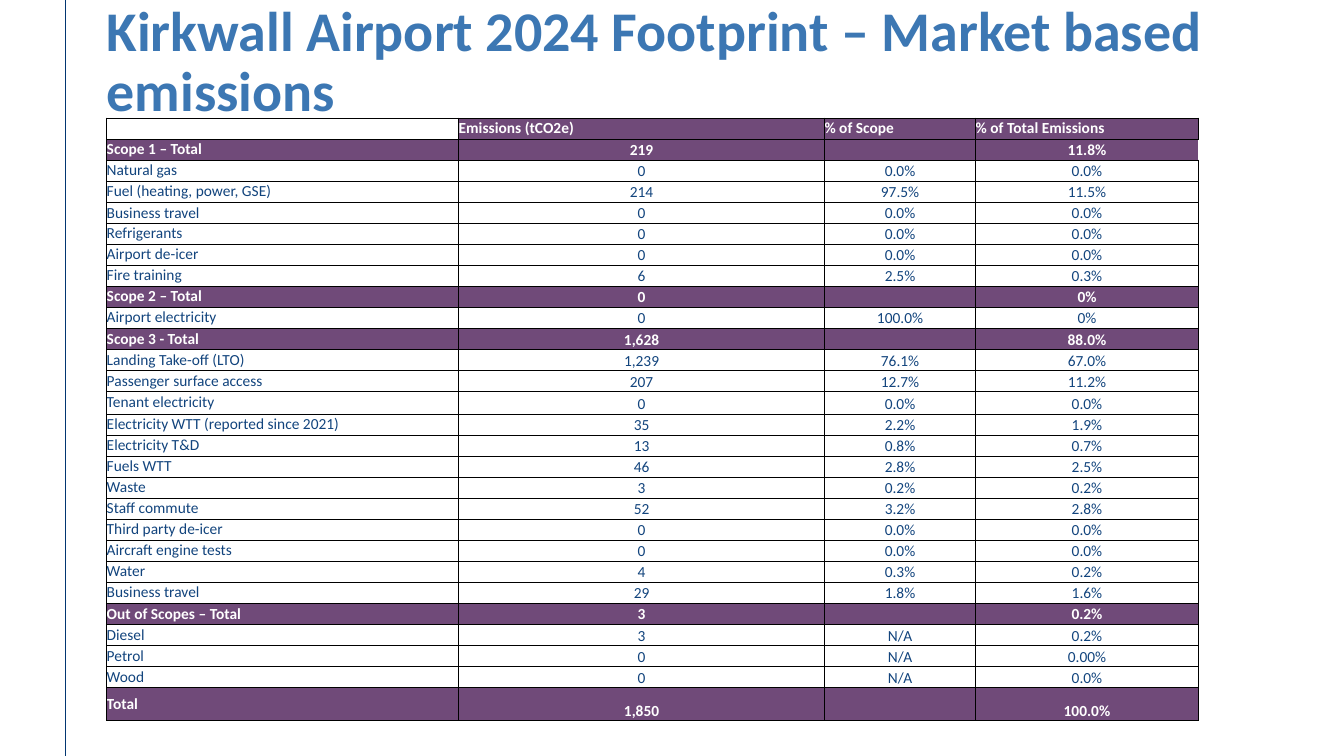
from dataclasses import dataclass
from typing import Any

from lxml.etree import SubElement
from pptx import Presentation
from pptx.dml.color import RGBColor
from pptx.enum.shapes import MSO_CONNECTOR
from pptx.enum.text import MSO_ANCHOR, PP_ALIGN
from pptx.oxml.ns import qn
from pptx.slide import Slide
from pptx.table import _Cell
from pptx.util import Cm, Pt


@dataclass(frozen=True)
class Theme:
    face: str = "Calibri"
    title_size: int = 40
    table_size: int = 11
    title: str = "3C77B3"
    body: str = "12447D"
    band: str = "704A79"
    on_band: str = "FFFFFF"
    margin_rule: str = "023671"
    grid: str = "000000"
    grid_width: float = 0.5


@dataclass(frozen=True)
class Emission:
    label: str
    tonnes: str
    scope_share: str
    total_share: str
    label_anchor: MSO_ANCHOR = MSO_ANCHOR.MIDDLE
    height: float = 0.53

    @property
    def is_total(self) -> bool:
        return not self.scope_share


THEME = Theme()
SLIDE_WIDTH, SLIDE_HEIGHT = 33.87, 19.05
CONTENT_LEFT = 2.69
HEADER_HEIGHT = 0.53
COLUMN_WIDTHS = (8.87, 9.22, 3.81, 5.61)
HEADERS = ("", "Emissions (tCO2e)", "% of Scope", "% of Total Emissions")
NO_INSETS = dict.fromkeys(
    ("margin_left", "margin_right", "margin_top", "margin_bottom"), 0
)
EMISSIONS = (
    Emission("Scope 1 – Total", "219", "", "11.8%"),
    Emission("Natural gas", "0", "0.0%", "0.0%"),
    Emission("Fuel (heating, power, GSE)", "214", "97.5%", "11.5%"),
    Emission("Business travel", "0", "0.0%", "0.0%", MSO_ANCHOR.BOTTOM),
    Emission("Refrigerants", "0", "0.0%", "0.0%"),
    Emission("Airport de-icer", "0", "0.0%", "0.0%"),
    Emission("Fire training", "6", "2.5%", "0.3%"),
    Emission("Scope 2 – Total", "0", "", "0%"),
    Emission("Airport electricity", "0", "100.0%", "0%"),
    Emission("Scope 3 - Total", "1,628", "", "88.0%"),
    Emission("Landing Take-off (LTO)", "1,239", "76.1%", "67.0%"),
    Emission("Passenger surface access", "207", "12.7%", "11.2%"),
    Emission("Tenant electricity", "0", "0.0%", "0.0%", height=0.57),
    Emission("Electricity WTT (reported since 2021)", "35", "2.2%", "1.9%"),
    Emission("Electricity T&D", "13", "0.8%", "0.7%"),
    Emission("Fuels WTT", "46", "2.8%", "2.5%"),
    Emission("Waste", "3", "0.2%", "0.2%"),
    Emission("Staff commute", "52", "3.2%", "2.8%"),
    Emission("Third party de-icer", "0", "0.0%", "0.0%"),
    Emission("Aircraft engine tests", "0", "0.0%", "0.0%"),
    Emission("Water", "4", "0.3%", "0.2%"),
    Emission("Business travel", "29", "1.8%", "1.6%"),
    Emission("Out of Scopes – Total", "3", "", "0.2%"),
    Emission("Diesel", "3", "N/A", "0.2%"),
    Emission("Petrol", "0", "N/A", "0.00%"),
    Emission("Wood", "0", "N/A", "0.0%"),
    Emission("Total", "1,850", "", "100.0%", height=0.83),
)


def apply_format(target: Any, values: dict[str, Any]) -> None:
    for attribute, value in values.items():
        setattr(target, attribute, value)


def write(paragraph: Any, wording: str, size: int, color: str, bold: bool) -> None:
    if not wording:
        SubElement(paragraph._p, qn("a:endParaRPr"), sz=str(size * 100))
        return
    run = paragraph.add_run()
    run.text = wording
    apply_format(run.font, {"name": THEME.face, "size": Pt(size), "bold": bold})
    run.font.color.rgb = RGBColor.from_string(color)


def draw_borders(cell: _Cell, open_sides: str = "") -> None:
    properties = cell._tc.get_or_add_tcPr()
    for side in "LRTB":
        border = SubElement(
            properties, qn(f"a:ln{side}"), w=str(Pt(THEME.grid_width))
        )
        if side in open_sides:
            SubElement(border, qn("a:noFill"))
        else:
            ink = SubElement(border, qn("a:solidFill"))
            SubElement(ink, qn("a:srgbClr"), val=THEME.grid)


def fill_cell(
    cell: _Cell,
    wording: str,
    banded: bool,
    anchor: MSO_ANCHOR,
    align: PP_ALIGN,
    open_sides: str = "",
) -> None:
    apply_format(cell, {**NO_INSETS, "vertical_anchor": anchor})
    draw_borders(cell, open_sides)
    if banded:
        cell.fill.solid()
        cell.fill.fore_color.rgb = RGBColor.from_string(THEME.band)
    else:
        cell.fill.background()
    paragraph = cell.text_frame.paragraphs[0]
    paragraph.alignment = align
    color = THEME.on_band if banded else THEME.body
    write(paragraph, wording, THEME.table_size, color, banded)


def add_margin_rule(slide: Slide) -> None:
    rule = slide.shapes.add_connector(
        MSO_CONNECTOR.STRAIGHT, Cm(1.65), 0, Cm(1.65), Cm(SLIDE_HEIGHT)
    )
    rule.line.width = Pt(1)
    rule.line.color.rgb = RGBColor.from_string(THEME.margin_rule)
    SubElement(rule._element.spPr, qn("a:effectLst"))


def add_title(slide: Slide, wording: str) -> None:
    title = slide.shapes.add_textbox(
        Cm(CONTENT_LEFT), Cm(0.08), Cm(30.4), Cm(2.69)
    ).text_frame
    apply_format(
        title, {**NO_INSETS, "word_wrap": True, "vertical_anchor": MSO_ANCHOR.TOP}
    )
    paragraph = title.paragraphs[0]
    paragraph.line_spacing = 0.9
    write(paragraph, wording, THEME.title_size, THEME.title, True)


def add_footprint(slide: Slide) -> None:
    heights = [HEADER_HEIGHT, *(emission.height for emission in EMISSIONS)]
    footprint = slide.shapes.add_table(
        len(heights),
        len(COLUMN_WIDTHS),
        Cm(CONTENT_LEFT),
        Cm(2.97),
        Cm(sum(COLUMN_WIDTHS)),
        Cm(sum(heights)),
    ).table
    apply_format(footprint, {"first_row": False, "horz_banding": False})
    for column, width in zip(footprint.columns, COLUMN_WIDTHS):
        column.width = Cm(width)
    for row, height in zip(footprint.rows, heights):
        row.height = Cm(height)
    for index, header in enumerate(HEADERS):
        fill_cell(
            footprint.cell(0, index),
            header,
            bool(header),
            MSO_ANCHOR.MIDDLE,
            PP_ALIGN.LEFT,
        )
    for line, emission in enumerate(EMISSIONS, start=1):
        fill_cell(
            footprint.cell(line, 0),
            emission.label,
            emission.is_total,
            emission.label_anchor,
            PP_ALIGN.LEFT,
        )
        figures = (emission.tonnes, emission.scope_share, emission.total_share)
        for index, figure in enumerate(figures, start=1):
            fill_cell(
                footprint.cell(line, index),
                figure,
                emission.is_total,
                MSO_ANCHOR.BOTTOM,
                PP_ALIGN.CENTER,
                "R" if (line, index) == (1, 3) else "",
            )


def main() -> None:
    deck = Presentation()
    apply_format(
        deck, {"slide_width": Cm(SLIDE_WIDTH), "slide_height": Cm(SLIDE_HEIGHT)}
    )
    slide = deck.slides.add_slide(deck.slide_layouts[6])
    add_margin_rule(slide)
    add_title(slide, "Kirkwall Airport 2024 Footprint – Market based emissions")
    add_footprint(slide)
    deck.save("out.pptx")


if __name__ == "__main__":
    main()
